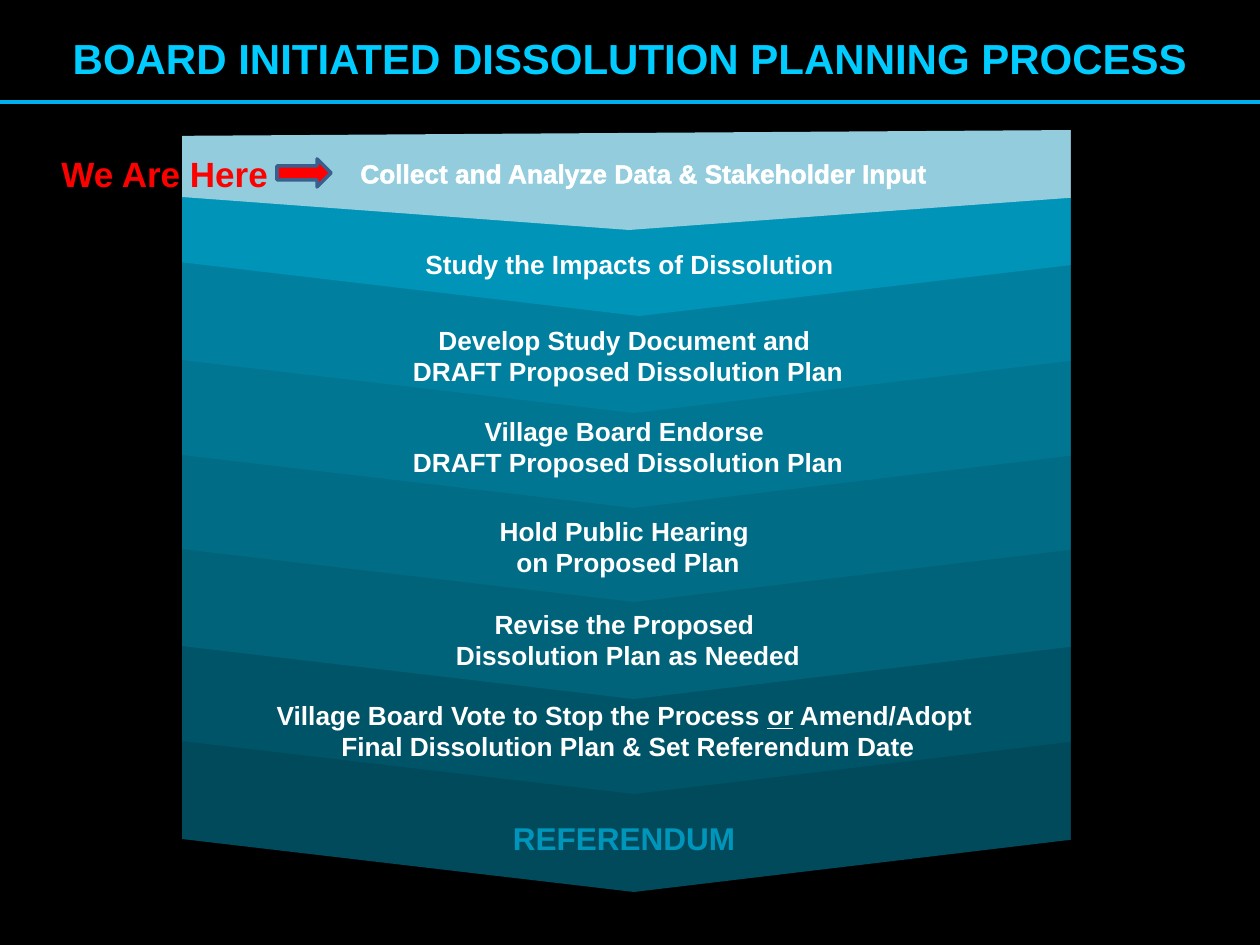
"""Build the dissolution planning process slide."""
from dataclasses import dataclass

import lxml.etree
import pptx
import pptx.dml.color
import pptx.enum.shapes
import pptx.enum.text
import pptx.oxml.ns
import pptx.util

EMU_PER_PX = 914400 / 126
SHAPES = pptx.enum.shapes.MSO_SHAPE
ALIGN = pptx.enum.text.PP_ALIGN


@dataclass(frozen=True)
class Theme:
    font: str = "Arial"
    background: str = "000000"
    title: str = "00CCFF"
    rule: str = "00B0F0"
    text: str = "FFFFFF"
    referendum: str = "0095BA"
    marker: str = "FF0000"
    marker_line: str = "3A5F8C"
    bands: tuple[str, ...] = ("004A5C", "005468", "00637A", "006C86", "007692", "00809E")
    study_band: str = "0095B8"
    collect_band: str = "93CDDD"
    title_size: int = 24
    marker_size: int = 20
    referendum_size: int = 18
    step_size: int = 15


@dataclass(frozen=True)
class Box:
    left: int
    top: int
    width: int
    height: int


@dataclass(frozen=True)
class Span:
    text: str
    underline: bool = False


@dataclass(frozen=True)
class Label:
    box: Box
    lines: tuple[tuple[Span, ...], ...]
    size: int
    color: str
    align: pptx.enum.text.PP_ALIGN = ALIGN.CENTER
    outlined: bool = False


@dataclass(frozen=True)
class Band:
    points: tuple[tuple[int, int], ...]
    color: str


THEME = Theme()
BAND_TIPS = (892, 794, 699, 602, 508, 413)
BAND_OUTLINE = ((1089, -160), (1086, -54), (634, 0), (173, -54), (171, -151))
BANDS = [
    Band(tuple((x, tip + y) for x, y in BAND_OUTLINE), color)
    for tip, color in zip(BAND_TIPS, THEME.bands)
] + [
    Band(((1100, 195), (1097, 262), (639, 316), (171, 261), (173, 195)), THEME.study_band),
    Band(((1085, 130), (1082, 197), (629, 230), (168, 196), (168, 136)), THEME.collect_band),
]
EDGE_MASKS = (Box(161, 115, 21, 743), Box(1071, 115, 21, 743), Box(1071, 124, 37, 771))


def plain(*lines: str) -> tuple[tuple[Span, ...], ...]:
    return tuple((Span(line),) for line in lines)


def step(box: Box, *lines: str, outlined: bool = False) -> Label:
    return Label(box, plain(*lines), THEME.step_size, THEME.text, outlined=outlined)


TITLE = Label(Box(0, 26, 1260, 64), plain("BOARD INITIATED DISSOLUTION PLANNING PROCESS"),
              THEME.title_size, THEME.title)
MARKER = Label(Box(49, 146, 236, 55), plain("We Are Here"),
               THEME.marker_size, THEME.marker, ALIGN.LEFT)
VOTE = Label(
    Box(169, 693, 918, 77),
    ((Span("Village Board Vote to Stop the Process "), Span("or", True), Span(" Amend/Adopt ")),
     (Span("Final Dissolution Plan & Set Referendum Date"),)),
    THEME.step_size, THEME.text)
STEPS = (
    step(Box(174, 151, 939, 44), "Collect and Analyze Data & Stakeholder Input", outlined=True),
    step(Box(160, 242, 939, 44), "Study the Impacts of Dissolution"),
    step(Box(170, 318, 916, 77), "Develop Study Document and ", "DRAFT Proposed Dissolution Plan"),
    step(Box(170, 409, 916, 77), "Village Board Endorse ", "DRAFT Proposed Dissolution Plan"),
    step(Box(170, 509, 916, 77), "Hold Public Hearing ", "on Proposed Plan"),
    step(Box(171, 602, 914, 77), "Revise the Proposed ", "Dissolution Plan as Needed"),
    VOTE,
    Label(Box(355, 813, 547, 50), plain("REFERENDUM "), THEME.referendum_size, THEME.referendum),
)


def px(length: int) -> int:
    return round(length * EMU_PER_PX)


def rgb(color: str) -> pptx.dml.color.RGBColor:
    return pptx.dml.color.RGBColor.from_string(color)


def place(box: Box) -> tuple[int, int, int, int]:
    return px(box.left), px(box.top), px(box.width), px(box.height)


def paint(shape, color: str) -> None:
    shape.shadow.inherit = False
    shape.fill.solid()
    shape.fill.fore_color.rgb = rgb(color)
    shape.line.fill.background()


def add_band(slide, band: Band) -> None:
    builder = slide.shapes.build_freeform(*band.points[0], scale=EMU_PER_PX)
    builder.add_line_segments(band.points[1:], close=True)
    paint(builder.convert_to_shape(), band.color)


def add_block(slide, kind: pptx.enum.shapes.MSO_SHAPE, box: Box, color: str):
    shape = slide.shapes.add_shape(kind, *place(box))
    paint(shape, color)
    return shape


def add_rule(slide, y: int) -> None:
    connector = slide.shapes.add_connector(
        pptx.enum.shapes.MSO_CONNECTOR.STRAIGHT, 0, px(y), px(1260), px(y))
    connector.line.color.rgb = rgb(THEME.rule)
    connector.line.width = pptx.util.Pt(2.25)
    properties = connector._element.spPr
    lxml.etree.SubElement(properties, pptx.oxml.ns.qn("a:effectLst"))


def outline_run(run, color: str) -> None:
    line = lxml.etree.Element(pptx.oxml.ns.qn("a:ln"), w=str(pptx.util.Pt(0.25)))
    fill = lxml.etree.SubElement(line, pptx.oxml.ns.qn("a:solidFill"))
    lxml.etree.SubElement(fill, pptx.oxml.ns.qn("a:srgbClr"), val=color)
    run._r.get_or_add_rPr().insert(0, line)


def add_label(slide, label: Label) -> None:
    frame = slide.shapes.add_textbox(*place(label.box)).text_frame
    frame.word_wrap = True
    frame.auto_size = pptx.enum.text.MSO_AUTO_SIZE.SHAPE_TO_FIT_TEXT
    paragraph = frame.paragraphs[0]
    paragraph.alignment = label.align
    for index, line in enumerate(label.lines):
        if index:
            paragraph.add_line_break()
        for span in line:
            run = paragraph.add_run()
            run.text = span.text
            run.font.name = THEME.font
            run.font.size = pptx.util.Pt(label.size)
            run.font.bold = True
            run.font.underline = span.underline
            run.font.color.rgb = rgb(label.color)
            if label.outlined:
                outline_run(run, label.color)


def main() -> None:
    presentation = pptx.Presentation()
    presentation.slide_width, presentation.slide_height = px(1260), px(945)
    slide = presentation.slides.add_slide(presentation.slide_layouts[6])
    slide.background.fill.solid()
    slide.background.fill.fore_color.rgb = rgb(THEME.background)
    add_label(slide, TITLE)
    add_rule(slide, 102)
    for band in BANDS:
        add_band(slide, band)
    for mask in EDGE_MASKS:
        add_block(slide, SHAPES.RECTANGLE, mask, THEME.background)
    for label in STEPS:
        add_label(slide, label)
    arrow = add_block(slide, SHAPES.RIGHT_ARROW, Box(277, 159, 54, 28), THEME.marker)
    arrow.line.color.rgb = rgb(THEME.marker_line)
    arrow.line.width = pptx.util.Pt(2)
    add_label(slide, MARKER)
    presentation.save("out.pptx")


if __name__ == "__main__":
    main()
